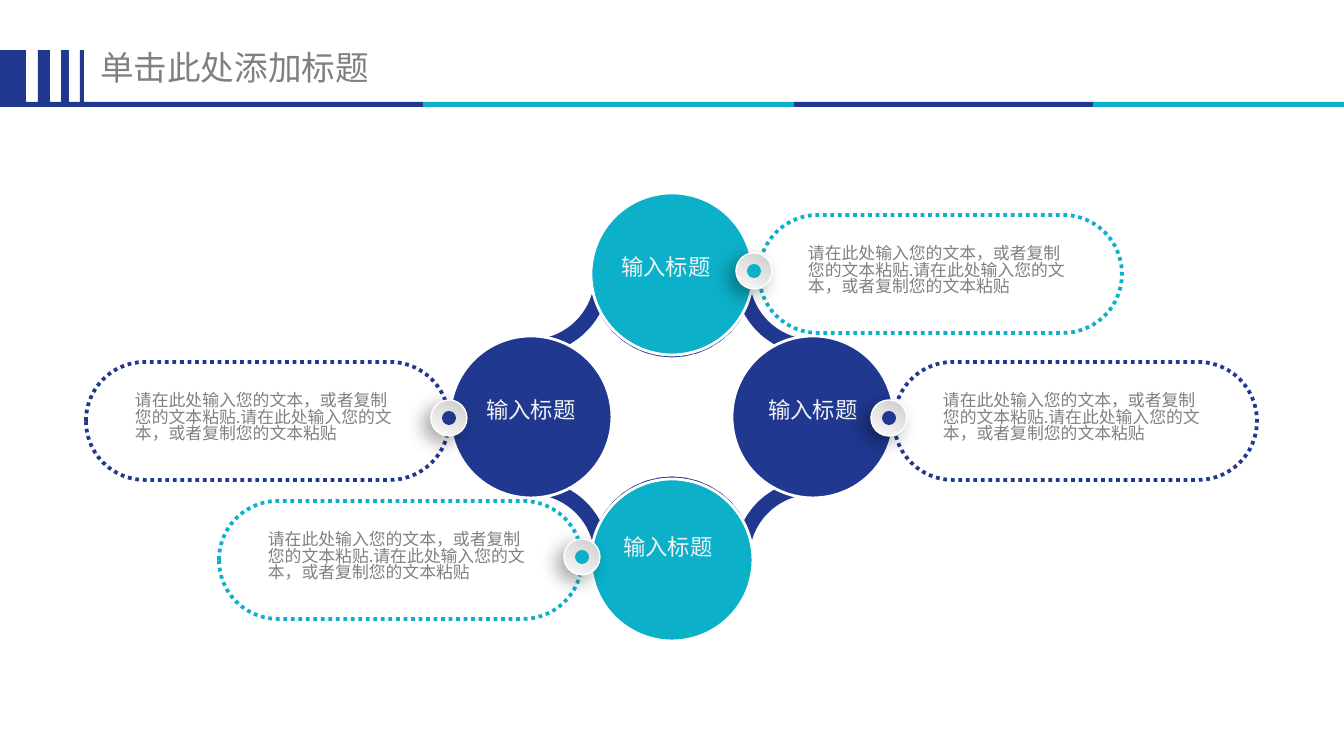
from dataclasses import dataclass
from math import cos, radians, sin

from lxml import etree
from pptx import Presentation
from pptx import util as u
from pptx.dml.color import RGBColor
from pptx.enum import dml, shapes, text
from pptx.oxml.ns import qn

PX = 914400 / 134.4  # EMU in one px


@dataclass(frozen=True)
class Theme:
    navy: str = "20388F"
    teal: str = "0CB1C9"
    grey: str = "808080"
    pale: str = "F2F2F2"
    white: str = "FFFFFF"
    dark: str = "CCCCCC"
    light: str = "FCFCFC"
    font: str = "Noto Sans CJK SC"
    title: int = 18
    label: int = 12
    body: int = 9


T = Theme()
KIND = shapes.MSO_SHAPE
BODY = "请在此处输入您的文本，或者复制您的文本粘贴.请在此处输入您的文本，或者复制您的文本粘贴"
BARS = [(0, 26), (38, 12), (61, 8), (80, 4)]
STRIPS = [(0, 423, T.navy), (423, 371, T.teal),
          (794, 301, T.navy), (1093, 251, T.teal)]
MID = (672, 417)
STEP = 141
# Circle: column, row, colour, label left, label top
NODES = [(0, -1, T.teal, 572, 245), (1, 0, T.navy, 719, 388),
         (-1, 0, T.navy, 437, 388), (0, 1, T.teal, 574, 525)]
# Card: left, top, colour, dot offset from the card's left
CARDS = [(894, 362, T.navy, -23), (759, 215, T.teal, -23),
         (219, 501, T.teal, 345), (86, 362, T.navy, 345)]


def px(*nums):
    return [u.Emu(round(n * PX)) for n in nums]


def rgb(code):
    return RGBColor.from_string(code)


def paint(shape, fill=None, line=None, width=1, dash=None):
    shape.shadow.inherit = False
    if fill:
        shape.fill.solid()
        shape.fill.fore_color.rgb = rgb(fill)
    else:
        shape.fill.background()
    if line:
        shape.line.color.rgb = rgb(line)
        shape.line.width = u.Pt(width)
        if dash:
            shape.line.dash_style = dash
    else:
        shape.line.fill.background()
    return shape


def add_form(slide, kind, box, **look):
    return paint(slide.shapes.add_shape(kind, *px(*box)), **look)


def add_text(slide, words, box, size, color, align=text.PP_ALIGN.LEFT,
             lead=1.0, pad=(13, 7), wrap=True):
    frame = slide.shapes.add_textbox(*px(*box)).text_frame
    frame.word_wrap = wrap
    frame.margin_left = frame.margin_right = px(pad[0])[0]
    frame.margin_top = frame.margin_bottom = px(pad[1])[0]
    para = frame.paragraphs[0]
    para.alignment, para.line_spacing = align, lead
    run = para.add_run()
    run.text = words
    run.font.size, run.font.name = u.Pt(size), T.font
    run.font.color.rgb = rgb(color)
    east = etree.SubElement(run.font._element, qn("a:ea"))
    east.set("typeface", T.font)


def add_head(slide):
    add_text(slide, "单击此处添加标题", (91, 47, 359, 51), T.title, T.grey,
             lead=0.9, pad=(9, 5), wrap=False)
    for left, wide in BARS:
        add_form(slide, KIND.RECTANGLE, (left, 50, wide, 52), fill=T.navy)
    for left, wide, color in STRIPS:
        add_form(slide, KIND.RECTANGLE, (left, 102, wide, 5), fill=color)


def add_ring(slide):
    # Eight arcs, each bulging inward, around the cells of a 3 by 3 grid
    cells = [(1, -1), (0, -1), (-1, -1), (-1, 0),
             (-1, 1), (0, 1), (1, 1), (1, 0)]
    points = []
    for i, (col, row) in enumerate(cells):
        radius, half = (74, 74) if i % 2 else (71, 29)
        for k in range(17):
            turn = radians(135 - 45 * i + half * (k / 8 - 1))
            points.append((MID[0] + col * STEP + radius * cos(turn),
                           MID[1] + row * STEP + radius * sin(turn)))
    # Points go in as EMU to keep the arcs smooth
    points = [px(*p) for p in points]
    path = slide.shapes.build_freeform(*points[0], scale=1.0)
    path.add_line_segments(points[1:], close=True)
    paint(path.convert_to_shape(), line=T.navy, width=8)


def add_node(slide, col, row, color, left, top):
    size = 162
    box = (MID[0] + col * STEP - size // 2,
           MID[1] + row * (STEP + 2) - size // 2, size, size)
    add_form(slide, KIND.OVAL, box, fill=color, line=T.white, width=1.5)
    add_text(slide, "输入标题", (left, top, 188, 43), T.label, T.pale,
             align=text.PP_ALIGN.CENTER, lead=1.05)


def add_dot(slide, left, top, color):
    knob = add_form(slide, KIND.OVAL, (left, top, 36, 36),
                    line=T.white, width=0.75)
    knob.fill.gradient()
    knob.fill.gradient_angle = 240
    for stop, shade in zip(knob.fill.gradient_stops, (T.dark, T.light)):
        stop.color.rgb = rgb(shade)
    # Soft shadow toward the lower left
    glow = etree.SubElement(
        knob._element.spPr.find(qn("a:effectLst")), qn("a:outerShdw"),
        blurRad=str(u.Pt(10)), dist=str(u.Pt(5)), dir=str(136 * 60000),
        algn="ctr", rotWithShape="0")
    black = etree.SubElement(glow, qn("a:srgbClr"), val="000000")
    etree.SubElement(black, qn("a:alpha"), val="34000")
    add_form(slide, KIND.OVAL, (left + 11, top + 11, 14, 14), fill=color)


def add_card(slide, left, top, color, shift):
    card = add_form(slide, KIND.ROUNDED_RECTANGLE, (left, top, 363, 118),
                    line=color, width=2, dash=dml.MSO_LINE.ROUND_DOT)
    card.adjustments[0] = 0.5
    add_text(slide, BODY, (left + 36, top + 31, 292, 74), T.body, T.grey,
             lead=0.83, pad=(13, 0))
    add_dot(slide, left + shift, top + 38, color)


def main():
    deck = Presentation()
    deck.slide_width, deck.slide_height = px(1344, 756)
    slide = deck.slides.add_slide(deck.slide_layouts[6])
    add_head(slide)
    add_ring(slide)
    for node in NODES:
        add_node(slide, *node)
    for card in CARDS:
        add_card(slide, *card)
    deck.save("out.pptx")


if __name__ == "__main__":
    main()
